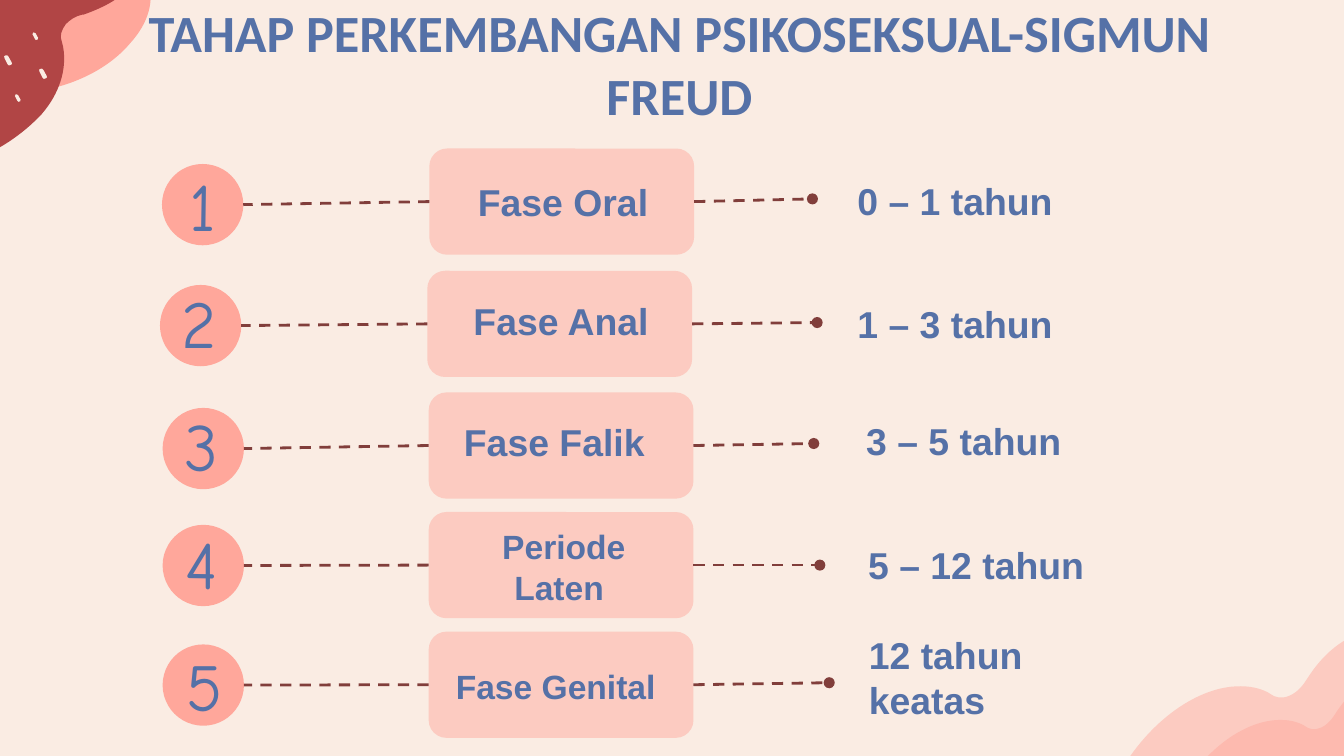
import typing

import pptx
import pptx.dml.color
import pptx.enum.dml
import pptx.enum.shapes
import pptx.enum.text
import pptx.oxml.ns
import pptx.util
from lxml import etree

RGB = pptx.dml.color.RGBColor
CREAM = RGB(0xFA, 0xEC, 0xE3)
CORAL = RGB(0xFF, 0xA7, 0x9B)
BERRY = RGB(0xB1, 0x45, 0x45)
WINE = RGB(0x81, 0x3E, 0x3B)
BLUE = RGB(0x55, 0x71, 0xA7)

SHAPE = pptx.enum.shapes.MSO_SHAPE
ALIGN = pptx.enum.text.PP_ALIGN
qn = pptx.oxml.ns.qn
WIDE = pptx.util.Inches(10)
UNIT = WIDE / 100
CARD_W, CARD_H, DISC = 19.7, 7.9, 6.05

HILL = [
    (16.1, 28),
    (18.4, 27.2, 20.7, 25.5, 22.4, 23.4), (24.9, 20.1, 25.9, 16.4, 25.4, 13.6),
    (25.4, 13.1, 25.5, 12.4, 25.9, 11.9), (25.9, 11.8, 25.9, 11.8, 26, 11.8),
    (28.3, 7.8, 28, 3.6, 25.2, 2.4),
    (24.3, 2, 23.3, 1.8, 22.3, 1.9), (20.5, 2.1, 18.7, 3.2, 17.2, 5.6),
    (16.7, 6.4, 16.1, 6.8, 15.5, 6.9), (15.2, 6.9, 15, 6.9, 14.8, 6.8),
    (14.6, 6.7, 14.5, 6.6, 14.3, 6.5), (13.5, 6.1, 12.6, 6, 11.6, 6.1),
    (8.9, 6.4, 5.9, 8.5, 3.8, 11.7), (2.6, 13.8, 1.9, 15.9, 1.9, 17.7),
]
PETAL = [
    (17.6, -4.9),
    (18.5, -5.9, 18.9, -7.2, 18.9, -8.5), (18.8, -11.5, 15.3, -13.5, 11, -12.9),
    (10.9, -12.9), (10.2, -12.8, 9.6, -12.9, 9.2, -13.2),
    (6.9, -14.8, 3.3, -15.3, -0.6, -14.4), (-3, -13.8, -5.4, -12.3, -6.9, -10.7),
    (-3.3, 6.1), (-1.7, 6.8, 0.4, 7.1, 2.6, 6.8), (5.6, 6.4, 8.2, 5, 9.7, 3.2),
    (10.7, 2.1, 11.3, 0.8, 11.2, -0.5), (11.2, -0.7, 11.1, -0.8, 11.1, -1),
    (11.1, -1.3, 11.2, -1.6, 11.4, -1.9), (11.8, -2.3, 12.3, -2.6, 12.9, -2.7),
    (13, -2.7), (15.2, -3, 16.7, -3.8, 17.6, -4.9),
]
FRUIT = [
    (3.1, 8.5),
    (4.4, 7, 5, 5.2, 4.7, 3.5), (4.7, 3.4, 4.6, 3.2, 4.6, 3.1),
    (4.4, 2.7, 4.6, 2.2, 4.9, 1.8), (5.2, 1.5, 5.6, 1.2, 6.1, 1.1),
    (6.1, 1.1, 6.1, 1.1, 6.2, 1.1), (7.9, 0.5, 9.1, -0.2, 9.9, -1.2),
    (11, -2.4, 11.3, -4, 11.1, -5.6), (10.6, -8.5, 6.7, -9.9, 2.6, -8.7),
    (2.5, -8.7), (1.8, -8.5, 1.2, -8.5, 0.7, -8.7),
    (-1.8, -9.9, -5.4, -9.9, -9.1, -8.4), (-11, -7.6, -12.7, -6.2, -14, -4.8),
    (-14.3, -4.4, -14.5, -4.1, -14.8, -3.7), (-8.6, 12.3),
    (-6.9, 12.8, -4.8, 12.7, -2.6, 12.1), (-0.3, 11.4, 1.7, 10, 3.1, 8.5),
]
SEED = [
    (0.55, 0.72),
    (0.6, 0.7, 0.6, 0.6, 0.58, 0.55), (0.33, 0.1), (0.3, 0, 0.2, 0, 0.12, 0.02),
    (0, 0.05, 0, 0.1, 0.03, 0.2), (0.27, 0.68), (0.3, 0.8, 0.4, 0.8, 0.55, 0.72),
]


class Stage(typing.NamedTuple):
    """One stage: offsets count from the card's corner, the digit's from the disc's."""
    name: str
    size: int
    age: str
    card: tuple
    disc: tuple
    digit: tuple
    label: tuple
    when: tuple
    tip: tuple


STAGES = [
    Stage("Fase Oral", 20, "0 – 1 tahun", (31.95, 11.05), (-19.9, 1.15), (1.05, 0.5),
          (2.75, 0.55, 14.4), (31.85, 2.35), (28.5, 3.75)),
    Stage("Fase Anal", 20, "1 – 3 tahun", (31.8, 20.15), (-19.9, 1.05), (0.9, 0.2),
          (2.2, 0.3, 15.5), (32, 2.35), (29, 3.85)),
    Stage("Fase Falik", 20, "3 – 5 tahun", (31.9, 29.2), (-19.8, 1.15), (0.9, 0.15),
          (1.65, 0.25, 15.4), (32.55, 2.05), (28.65, 3.8)),
    Stage("Periode Laten ", 18, "5 – 12 tahun", (31.9, 38.1), (-19.8, 0.95), (0.9, 0.25),
          (2.35, 0.65, 15.4), (32.7, 2.35), (29.1, 3.95)),
    Stage("Fase Genital ", 18, "12 tahun keatas", (31.9, 47), (-19.8, 0.95), (1.15, 0.45),
          (1.4, 0.65, 16.8), (32.75, 1.85), (29.8, 3.8)),
]


def span(*cells):
    """Turn grid units into slide lengths."""
    return [round(cell * UNIT) for cell in cells]


def paint(shape, tone, clear=None):
    """Fill a shape with no outline, and optionally with an opacity."""
    shape.shadow.inherit = False
    shape.fill.solid()
    shape.fill.fore_color.rgb = tone
    shape.line.fill.background()
    if clear:
        hue = next(shape.element.spPr.iter(qn("a:srgbClr")))
        etree.SubElement(hue, qn("a:alpha"), val=str(clear * 1000))


def blob(slide, box, parts, tone, clear=None):
    """Draw lines and curves in a box given as left, top and scale."""
    left, top, scale = box
    spots = [span(left + scale * part[i], top + scale * part[i + 1])
             for part in parts for i in range(0, len(part), 2)]
    form = slide.shapes.build_freeform(*spots[0], scale=1.0)
    form.add_line_segments(spots[1:], close=True)
    shape = form.convert_to_shape()
    steps = iter(list(shape.element.spPr.iter(qn("a:lnTo"))))
    for part in parts[1:]:
        first = next(steps)
        if len(part) == 6:
            first.tag = qn("a:cubicBezTo")
            for step in (next(steps), next(steps)):
                first.append(step[0])
                step.getparent().remove(step)
    paint(shape, tone, clear)


def write(slide, box, text, size, font="Arial", bold=True, align=ALIGN.CENTER):
    """Put a text in a box, centred in height."""
    frame = slide.shapes.add_textbox(*span(*box)).text_frame
    frame.word_wrap = True
    frame.margin_left = frame.margin_right = frame.margin_top = frame.margin_bottom = 0
    frame.vertical_anchor = pptx.enum.text.MSO_ANCHOR.MIDDLE
    frame.text = text
    para = frame.paragraphs[0]
    para.alignment = align
    face = para.runs[0].font
    face.name, face.size, face.bold = font, pptx.util.Pt(size), bold
    face.color.rgb = BLUE


def link(slide, start, end, dot=False):
    """Draw a dashed line, with a dot at its end if asked."""
    kind = pptx.enum.shapes.MSO_CONNECTOR.STRAIGHT
    wire = slide.shapes.add_connector(kind, *span(*start, *end))
    wire.line.color.rgb = WINE
    wire.line.width = pptx.util.Pt(1.5)
    wire.line.dash_style = pptx.enum.dml.MSO_LINE.DASH
    props = wire._element.spPr
    if dot:
        etree.SubElement(props.find(qn("a:ln")), qn("a:tailEnd"), type="oval")
    etree.SubElement(props, qn("a:effectLst"))


def row(slide, box, stage, number):
    """Draw one numbered stage from the corner of its card."""
    left, top = box

    def at(x, y):
        """Shift a point to the row's corner."""
        return left + x, top + y

    card = slide.shapes.add_shape(SHAPE.ROUNDED_RECTANGLE, *span(left, top, CARD_W, CARD_H))
    paint(card, CORAL, 47)
    x, y = stage.disc
    disc = slide.shapes.add_shape(SHAPE.OVAL, *span(*at(x, y), DISC, DISC))
    paint(disc, CORAL)
    right, down = stage.digit
    write(slide, (*at(x + right, y + down), 4, 5.1), str(number), 36, "Comic Neue", False)
    mid = CARD_H / 2
    link(slide, at(0, mid), at(x + DISC, y + DISC / 2))
    link(slide, at(CARD_W, mid), at(*stage.tip), True)
    x, y, wide = stage.label
    write(slide, (*at(x, y), wide, 6.8), stage.name, stage.size)
    write(slide, (*at(*stage.when), 19.9, 3.1), stage.age, 20, align=ALIGN.LEFT)


def decor(slide):
    """Draw the hills and the fruit in two corners."""
    for box in ((80, 45, 1), (85.2, 48.6, 0.82)):
        blob(slide, box, HILL, CORAL, 47)
    blob(slide, (0, 0, 1), PETAL, CORAL)
    blob(slide, (0, 0, 1), FRUIT, BERRY)
    for box in ((2.4, 2.4, 0.75), (1.1, 7, 0.75), (2.9, 5.1, 1), (0.3, 4.1, 1)):
        blob(slide, box, SEED, CREAM)


def main():
    """Build the slide and save it."""
    deck = pptx.Presentation()
    deck.slide_width, deck.slide_height = WIDE, WIDE * 9 // 16
    slide = deck.slides.add_slide(deck.slide_layouts[6])
    slide.background.fill.solid()
    slide.background.fill.fore_color.rgb = CREAM
    decor(slide)
    title = "TAHAP PERKEMBANGAN PSIKOSEKSUAL-SIGMUN FREUD"
    write(slide, (8.4, 1.55, 84.3, 6.3), title, 28, "Calibri")
    for number, stage in enumerate(STAGES, 1):
        row(slide, stage.card, stage, number)
    deck.save("out.pptx")


if __name__ == "__main__":
    main()
